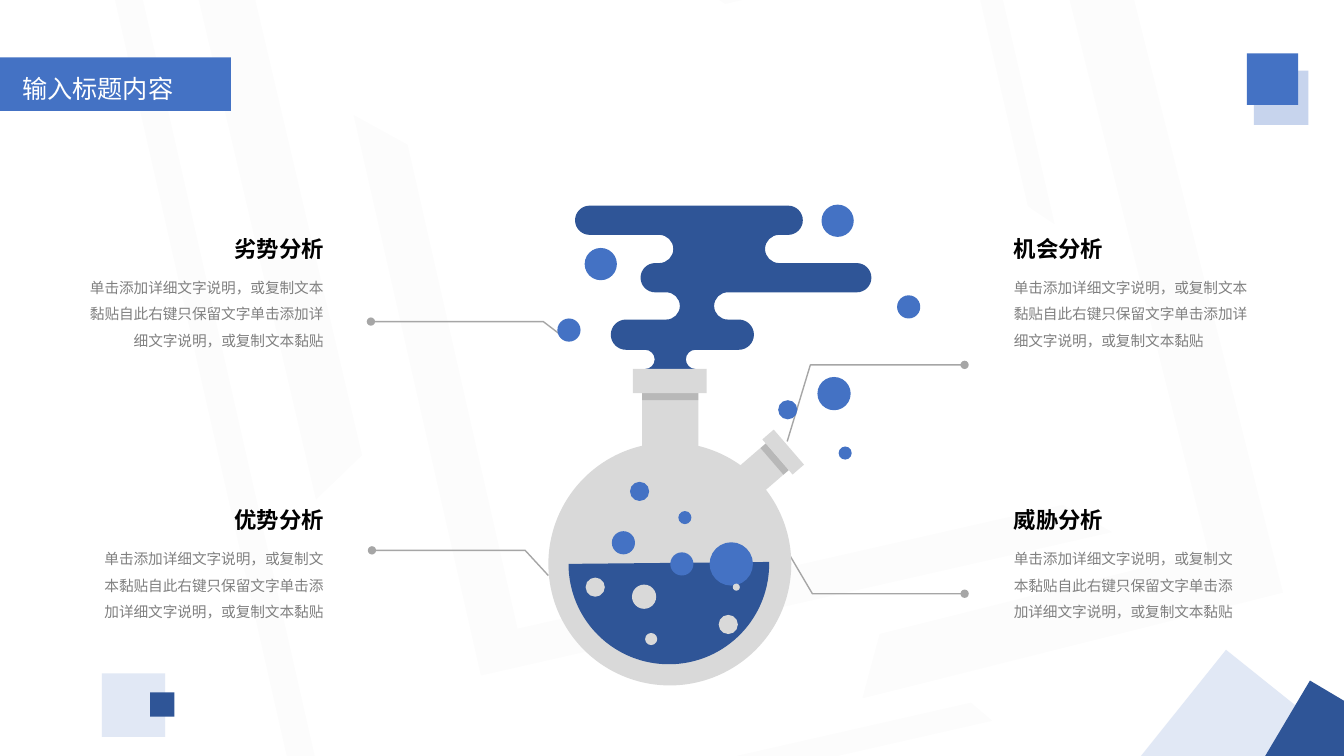
from lxml.etree import SubElement
from pptx import Presentation
from pptx.dml.color import RGBColor
from pptx.enum.shapes import MSO_SHAPE
from pptx.enum.text import MSO_ANCHOR, MSO_AUTO_SIZE, PP_ALIGN
from pptx.oxml.ns import qn
from pptx.util import Inches, Pt

BLUE = RGBColor(0x44, 0x72, 0xC4)
NAVY = RGBColor(0x2F, 0x55, 0x97)
PALE_BLUE = RGBColor(0xC7, 0xD4, 0xED)
GLASS = RGBColor(0xD9, 0xD9, 0xD9)
LINE_GRAY = RGBColor(0xA6, 0xA6, 0xA6)
TEXT_GRAY = RGBColor(0x80, 0x80, 0x80)
BLACK = RGBColor(0, 0, 0)
WHITE = RGBColor(0xFF, 0xFF, 0xFF)
FONT = "Noto Sans CJK SC"
CAPTION = "单击添加详细文字说明，或复制文本黏贴自此右键只保留文字单击添加详细文字说明，或复制文本黏贴"


def draw(parent, kind, bounds, color, opacity=100, rotation=0):
    """Add a borderless preset shape; bounds are left, top, width, height in inches."""
    shape = parent.shapes.add_shape(kind, *map(Inches, bounds))
    shape.shadow.inherit = False
    shape.line.fill.background()
    shape.fill.solid()
    shape.fill.fore_color.rgb = color
    shape.rotation = rotation
    if opacity < 100:
        tint = shape.element.spPr.find(".//" + qn("a:srgbClr"))
        SubElement(tint, qn("a:alpha"), val=str(opacity * 1000))
    return shape


def write(box, words, size, color, alignment, bold=False, spacing=1.0):
    frame = box.text_frame
    frame.word_wrap = True
    frame.vertical_anchor = MSO_ANCHOR.TOP
    para = frame.paragraphs[0]
    para.alignment = alignment
    para.line_spacing = spacing
    span = para.add_run()
    span.text = words
    span.font.name = FONT
    span.font.size = Pt(size)
    span.font.bold = bold
    span.font.color.rgb = color
    SubElement(span.font._element, qn("a:ea"), typeface=FONT)


deck = Presentation()
deck.slide_width = Inches(40 / 3)
deck.slide_height = Inches(7.5)
page = deck.slides.add_slide(deck.slide_layouts[5])

# Faint background frames
backdrop = page.shapes.add_group_shape()
for bounds, rotation, thickness, cut, flipped in [
    ((4.42, 0, 5.7, 6.42), 257.2, 0.08, 0.065, False),
    ((0.81, -0.06, 9.28, 6.9), 257.2, 0.039, 0.032, False),
    ((7.24, -0.34, 3.01, 2.83), 77, 0.077, 0.052, False),
    ((2.37, -1.66, 9.45, 5.61), 346.8, 0.091, 0.097, False),
    ((5.83, 0.5, 7.74, 4.3), 75.9, 0.144, 0.134, True),
]:
    half_frame = draw(backdrop, MSO_SHAPE.HALF_FRAME, bounds, LINE_GRAY, 3, rotation)
    half_frame.adjustments[0] = thickness
    half_frame.adjustments[1] = cut
    if flipped:
        half_frame.element.spPr.find(qn("a:xfrm")).set("flipH", "1")

# Title on its banner
banner = draw(page, MSO_SHAPE.PENTAGON, (0, 0.57, 2.29, 0.53), BLUE)
banner.adjustments[0] = 0
title = page.shapes.title
title.left, title.top, title.width, title.height = map(Inches, (0.12, 0.68, 2.17, 0.43))
write(title, "输入标题内容", 18, WHITE, PP_ALIGN.LEFT)
title.text_frame.auto_size = MSO_AUTO_SIZE.NONE
banner.element.addnext(title.element)

# Corner squares
corners = page.shapes.add_group_shape()
for left, top, side, color, opacity, rotation in [
    (12.44, 0.7, 0.54, PALE_BLUE, 100, 0),
    (11.53, 6.75, 1.5, PALE_BLUE, 53, 308.7),
    (1.01, 6.68, 0.63, PALE_BLUE, 53, 0),
    (1.49, 6.87, 0.24, NAVY, 100, 0),
    (12.37, 0.53, 0.51, BLUE, 100, 0),
    (12.7, 6.92, 0.91, NAVY, 100, 300.7),
]:
    draw(corners, MSO_SHAPE.RECTANGLE, (left, top, side, side), color, opacity, rotation)

# Leader lines, each ending in a dot
for start, bend, end in [
    ((5.64, 3.38), (5.39, 3.19), (3.68, 3.19)),
    ((5.44, 5.71), (5.21, 5.46), (3.69, 5.46)),
    ((7.81, 4.38), (8.04, 3.62), (9.57, 3.62)),
    ((7.83, 5.5), (8.06, 5.89), (9.57, 5.89)),
]:
    builder = page.shapes.build_freeform(*map(Inches, start))
    builder.add_line_segments([tuple(map(Inches, point)) for point in (bend, end)], close=False)
    leader = builder.convert_to_shape()
    leader.shadow.inherit = False
    leader.fill.background()
    leader.line.color.rgb = LINE_GRAY
    leader.line.width = Pt(1)
    SubElement(leader.element.spPr.find(qn("a:ln")), qn("a:tailEnd"), type="oval")

# Flask body
flask = page.shapes.add_group_shape()
draw(flask, MSO_SHAPE.OVAL, (5.44, 4.39, 2.41, 2.41), GLASS)

# Smoke: bars with round ends (1) alternate with round gaps (-1)
# An end is two quarter curves: share of the reach, share of the half height
ROUND_END = [(0, -1), (0.55, -1), (1, -0.55), (1, 0), (1, 0.55), (0.55, 1), (0, 1)]
right_side, left_side = [], []
for top, bottom, left_x, right_x, outward in [
    (2.04, 2.33, 5.85, 7.82, 1),
    (2.33, 2.61, 6.54, 7.73, -1),
    (2.61, 2.9, 6.5, 8.5, 1),
    (2.9, 3.17, 6.61, 7.22, -1),
    (3.17, 3.47, 6.21, 7.33, 1),
    (3.47, 3.66, 6.4, 6.9, -1),
]:
    radius = (bottom - top) / 2
    for across, down in ROUND_END:
        reach = outward * radius * across
        y = Inches(top + radius * (1 + down))
        right_side.append((Inches(right_x + reach), y))
        left_side.append((Inches(left_x - reach), y))
outline = right_side + left_side[::-1]
builder = flask.shapes.build_freeform(*outline[0])
builder.add_line_segments(outline[1:])
smoke = builder.convert_to_shape()
segments = smoke.element.spPr.findall(".//" + qn("a:lnTo"))
for first in range(0, len(outline), len(ROUND_END)):
    for start in (first, first + 3):
        curve = segments[start].makeelement(qn("a:cubicBezTo"))
        segments[start].addprevious(curve)
        for segment in segments[start:start + 3]:
            curve.append(segment[0])
            segment.getparent().remove(segment)
smoke.shadow.inherit = False
smoke.line.fill.background()
smoke.fill.solid()
smoke.fill.fore_color.rgb = NAVY

# Bubbles, necks and liquid
for left, top, size in [
    (8.15, 2.03, 0.32), (5.8, 2.46, 0.32), (5.53, 3.16, 0.23), (8.9, 2.93, 0.23),
    (8.11, 3.74, 0.33), (8.32, 4.43, 0.13), (7.72, 3.97, 0.19), (6.25, 4.78, 0.19),
    (6.73, 5.07, 0.13), (6.07, 5.27, 0.23),
]:
    draw(flask, MSO_SHAPE.OVAL, (left, top, size, size), BLUE)
draw(flask, MSO_SHAPE.RECTANGLE, (6.37, 3.9, 0.56, 0.53), GLASS)
draw(flask, MSO_SHAPE.RECTANGLE, (7.41, 4.47, 0.35, 0.34), GLASS, rotation=49.2)
liquid = draw(flask, MSO_SHAPE.CHORD, (5.64, 4.6, 1.99, 1.99), NAVY)
liquid.adjustments[0] = 215.307
liquid.adjustments[1] = 108.024
for left, top, size, color in [
    (6.65, 5.48, 0.23, BLUE), (7.04, 5.38, 0.43, BLUE),
    (6.27, 5.8, 0.24, GLASS), (5.81, 5.73, 0.19, GLASS), (7.13, 6.1, 0.19, GLASS),
    (6.4, 6.28, 0.12, GLASS), (7.27, 5.79, 0.07, GLASS),
]:
    draw(flask, MSO_SHAPE.OVAL, (left, top, size, size), color)

# Neck shadows and rims
for bounds, color, opacity, rotation in [
    ((6.37, 3.9, 0.56, 0.07), BLACK, 15, 0),
    ((7.51, 4.52, 0.35, 0.07), BLACK, 15, 49.2),
    ((7.54, 4.41, 0.46, 0.15), GLASS, 100, 49.2),
    ((6.28, 3.66, 0.73, 0.24), GLASS, 100, 0),
]:
    draw(flask, MSO_SHAPE.RECTANGLE, bounds, color, opacity, rotation)

# Four analysis notes
LEFT_NOTE_EDGE = 3.31
RIGHT_NOTE_EDGE = 9.96
HEADING_WIDTH = 1.97
for heading, on_left, top, caption_width in [
    ("优势分析", True, 4.97, 2.5),
    ("劣势分析", True, 2.28, 2.55),
    ("机会分析", False, 2.28, 2.6),
    ("威胁分析", False, 4.97, 2.5),
]:
    alignment = PP_ALIGN.RIGHT if on_left else PP_ALIGN.LEFT
    for words, offset, width, height, size, color, bold, spacing in [
        (heading, 0, HEADING_WIDTH, 0.37, 16, BLACK, True, 1.0),
        (CAPTION, 0.35, caption_width, 0.9, 10.5, TEXT_GRAY, False, 1.5),
    ]:
        left = LEFT_NOTE_EDGE - width if on_left else RIGHT_NOTE_EDGE
        box = page.shapes.add_textbox(*map(Inches, (left, top + offset, width, height)))
        write(box, words, size, color, alignment, bold, spacing)
        box.text_frame.auto_size = MSO_AUTO_SIZE.SHAPE_TO_FIT_TEXT

deck.save("out.pptx")
